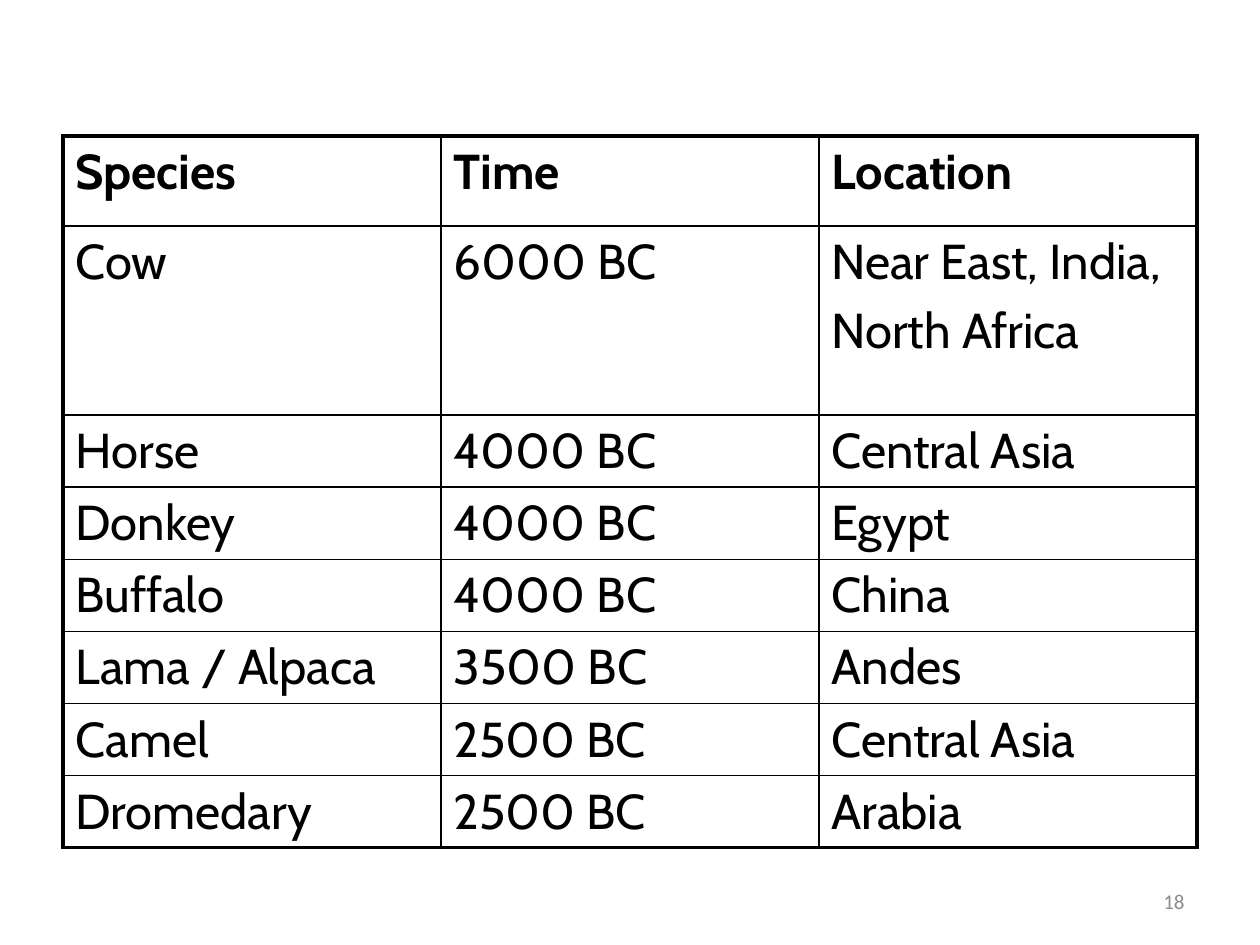
from dataclasses import dataclass

from lxml.etree import SubElement
from pptx import Presentation
from pptx.dml.color import RGBColor
from pptx.enum.text import MSO_ANCHOR, PP_ALIGN
from pptx.oxml.ns import qn
from pptx.util import Pt

# Content
HEAD = ("Species", "Time", "Location")
ROWS = [
    ("Cow", "6000 BC", "Near East, India,\nNorth Africa"),
    ("Horse", "4000 BC", "Central Asia"),
    ("Donkey", "4000 BC", "Egypt"),
    ("Buffalo", "4000 BC", "China"),
    ("Lama / Alpaca", "3500 BC", "Andes"),
    ("Camel", "2500 BC", "Central Asia"),
    ("Dromedary", "2500 BC", "Arabia"),
]
PAGE = "18"

# Layout in px
SCALE = 914400 / 126
SLIDE = (1260, 945)
LEFT, TOP, COL = 63, 136, 378
HIGH = [90, 189] + [72] * 6
PAGE_BOX = (903, 876, 294, 50)


@dataclass
class Theme:
    ink: str = "000000"
    gray: str = "8C8C8C"
    body: str = "Cabin"
    foot: str = "Calibri"
    big: int = 28
    small: int = 12
    thin: float = 1
    thick: float = 2.25


THEME = Theme()


def px(*vals):
    return [round(v * SCALE) for v in vals]


def write(frame, text, *, font=THEME.body, size=THEME.big, color=THEME.ink,
          bold=False, align=PP_ALIGN.LEFT, gap=0):
    """Fill a frame, one paragraph per line; gap is space before in percent."""
    frame.word_wrap = True
    for i, line in enumerate(text.split("\n")):
        para = frame.add_paragraph() if i else frame.paragraphs[0]
        para.alignment = align
        if gap:
            space = SubElement(para._p.get_or_add_pPr(), qn("a:spcBef"))
            SubElement(space, qn("a:spcPct"), val=str(gap * 1000))
        run = para.add_run()
        run.text = line
        run.font.name, run.font.size, run.font.bold = font, Pt(size), bold
        run.font.color.rgb = RGBColor.from_string(color)


def edge(cell, **widths):
    """Draw cell borders; lines must come before the fill."""
    props = cell._tc.get_or_add_tcPr()
    for side, width in widths.items():
        line = SubElement(props, qn(f"a:ln{side}"), w=str(Pt(width)))
        fill = SubElement(line, qn("a:solidFill"))
        SubElement(fill, qn("a:srgbClr"), val=THEME.ink)
    cell.fill.background()


def main():
    deck = Presentation()
    deck.slide_width, deck.slide_height = px(*SLIDE)
    slide = deck.slides.add_slide(deck.slide_layouts[6])

    # Species table: thick frame, thin inner lines
    data = [HEAD] + ROWS
    rows, cols = len(data), len(HEAD)
    table = slide.shapes.add_table(
        rows, cols, *px(LEFT, TOP, COL * cols, sum(HIGH))).table
    table.first_row = table.horz_banding = False
    for col in table.columns:
        col.width = px(COL)[0]
    for r, items in enumerate(data):
        table.rows[r].height = px(HIGH[r])[0]
        for c, text in enumerate(items):
            cell = table.cell(r, c)
            write(cell.text_frame, text, bold=r == 0, gap=20)
            outer = {"L": c == 0, "R": c == cols - 1,
                     "T": r == 0, "B": r == rows - 1}
            edge(cell, **{side: THEME.thick if out else THEME.thin
                          for side, out in outer.items()})

    # Page number
    frame = slide.shapes.add_textbox(*px(*PAGE_BOX)).text_frame
    frame.vertical_anchor = MSO_ANCHOR.MIDDLE
    write(frame, PAGE, font=THEME.foot, size=THEME.small, color=THEME.gray,
          align=PP_ALIGN.RIGHT)

    deck.save("out.pptx")


if __name__ == "__main__":
    main()
